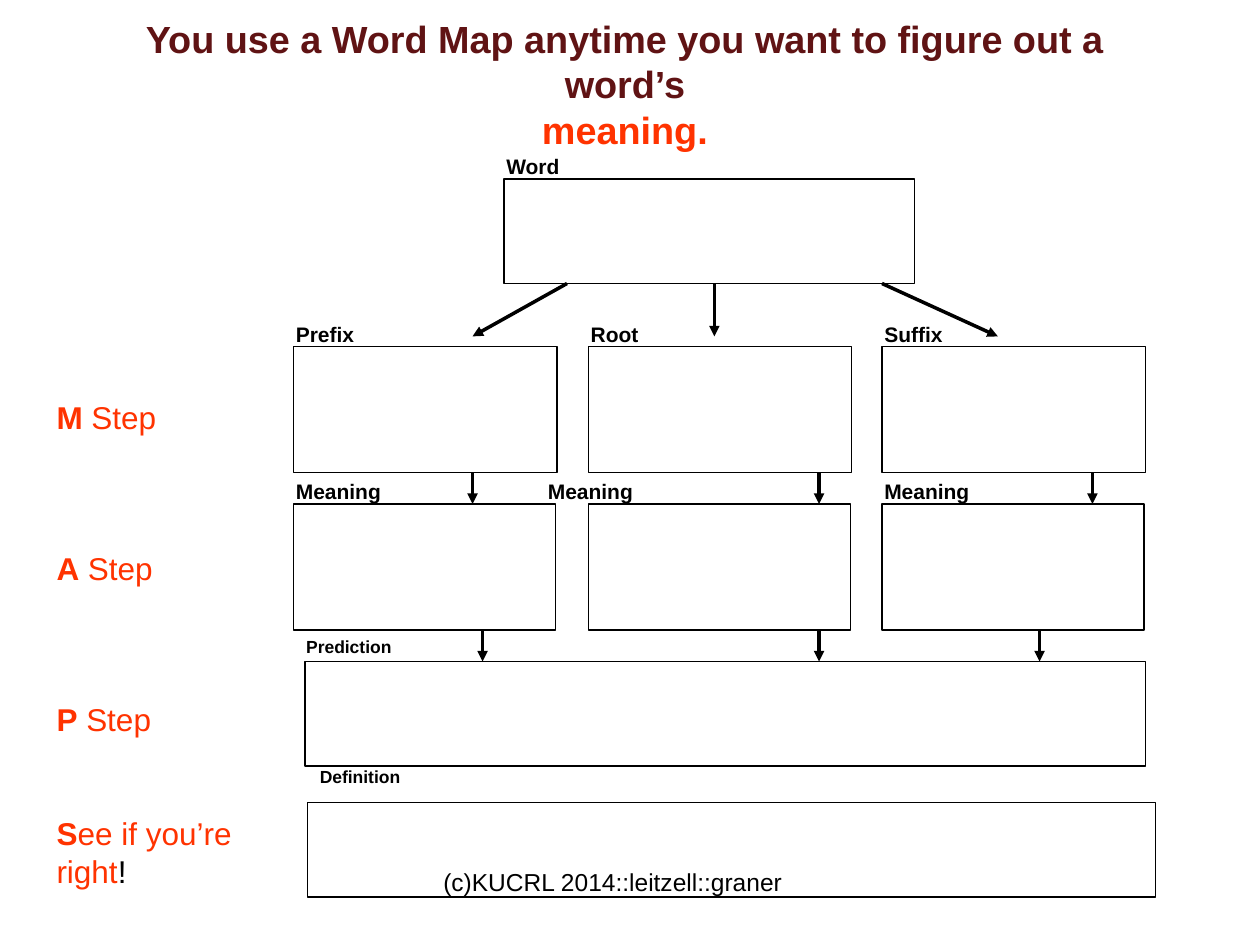
from lxml import etree
from pptx import Presentation
from pptx import util as u
from pptx.dml.color import RGBColor
from pptx.enum import shapes, text
from pptx.oxml.ns import qn

BLACK = RGBColor(0x00, 0x00, 0x00)
MAROON = RGBColor(0x60, 0x13, 0x14)
ORANGE = RGBColor(0xFF, 0x33, 0x00)
FONT = "Arial"
COLUMNS = (2.33, 4.67, 7)


def place(shape, left, top, width, height):
    shape.left, shape.top = u.Inches(left), u.Inches(top)
    shape.width, shape.height = u.Inches(width), u.Inches(height)


def add_span(para, words, size=12, color=BLACK, bold=False):
    span = para.add_run()
    span.text = words
    font = span.font
    font.name, font.size, font.bold = FONT, u.Pt(size), bold
    font.color.rgb = color


def add_text_box(page, left, top, width, height):
    box = page.shapes.add_textbox(0, 0, 0, 0)
    place(box, left, top, width, height)
    box.text_frame.word_wrap = True
    return box


def write_label(box, words, size=12):
    """Bold caption with a hanging indent and no bullet."""
    para = box.text_frame.paragraphs[0]
    properties = para._p.get_or_add_pPr()
    properties.set("marL", str(u.Inches(0.38)))
    properties.set("indent", str(u.Inches(-0.38)))
    etree.SubElement(properties, qn("a:buNone"))
    para.space_before = u.Pt(0)
    add_span(para, words, size=size, bold=True)


def add_label(page, words, left, top, size=12):
    write_label(add_text_box(page, left, top, 1, 0.33), words, size)


def add_frame(page, left, top, width, height):
    frame = page.shapes.add_shape(shapes.MSO_SHAPE.RECTANGLE, 0, 0, 0, 0)
    place(frame, left, top, width, height)
    frame.shadow.inherit = False
    frame.fill.background()
    frame.line.color.rgb = BLACK
    frame.line.width = u.Pt(0.75)


def add_arrow(page, x1, y1, x2, y2):
    arrow = page.shapes.add_connector(
        shapes.MSO_CONNECTOR.STRAIGHT,
        u.Inches(x1), u.Inches(y1), u.Inches(x2), u.Inches(y2))
    arrow.line.color.rgb = BLACK
    arrow.line.width = u.Pt(2)
    etree.SubElement(arrow.line._get_or_add_ln(), qn("a:tailEnd"), type="triangle")
    etree.SubElement(arrow._element.spPr, qn("a:effectLst"))


def fill_title(title):
    place(title, 0.75, 0.25, 8.42, 0.83)
    frame = title.text_frame
    frame.auto_size = text.MSO_AUTO_SIZE.NONE
    frame.vertical_anchor = text.MSO_ANCHOR.MIDDLE
    para = frame.paragraphs[0]
    para.alignment = text.PP_ALIGN.CENTER
    para.line_spacing = u.Pt(26)
    add_span(para, "You use a Word Map anytime you want to figure out a word’s",
             size=21.6, color=MAROON, bold=True)
    para.add_line_break()
    add_span(para, "meaning.", size=21.6, color=ORANGE, bold=True)


def add_steps(page):
    frame = add_text_box(page, 0.35, 3.11, 2.09, 3.74).text_frame
    line = 21.6
    steps = (("M", " Step", 0), ("A", " Step", 3), ("P", " Step", 3),
             ("S", "ee if you’re right", 2))
    for index, (letter, rest, gap_lines) in enumerate(steps):
        para = frame.add_paragraph() if index else frame.paragraphs[0]
        para.line_spacing = u.Pt(line)
        para.space_before = u.Pt(gap_lines * line)
        add_span(para, letter, size=18, color=ORANGE, bold=True)
        add_span(para, rest, size=18, color=ORANGE)
    add_span(para, "!", size=18)


def main():
    deck = Presentation()
    deck.slide_width, deck.slide_height = u.Inches(10), u.Inches(7.5)
    page = deck.slides.add_slide(deck.slide_layouts[1])
    fill_title(page.shapes.title)

    # Prediction caption
    body = page.placeholders[1]
    place(body, 2.33, 5, 1, 0.33)
    body.text_frame.auto_size = text.MSO_AUTO_SIZE.NONE
    write_label(body, "Prediction", size=10)

    # Word, prediction and definition frames
    add_frame(page, 4, 1.42, 3.26, 0.83)
    add_frame(page, 2.42, 5.25, 6.67, 0.83)
    add_frame(page, 2.44, 6.37, 6.73, 0.75)
    add_label(page, "Word", 3.92, 1.17)
    add_label(page, "Definition", 2.44, 6.03, size=10)

    # Word parts and their meanings
    meaning_lefts = (2.25, 4.25, 6.92)
    for part, left, meaning_left in zip(("Prefix", "Root", "Suffix"),
                                        COLUMNS, meaning_lefts):
        add_frame(page, left, 2.75, 2.09, 1)
        add_frame(page, left, 4, 2.08, 1)
        add_label(page, part, left - 0.08, 2.5)
        add_label(page, "Meaning", meaning_left, 3.75)

    # Arrows from the word, then down each column
    for start, end in ((4.5, 3.75), (5.67, 5.67), (7, 7.92)):
        add_arrow(page, start, 2.25, end, 2.67)
    for top, centers in ((3.75, (3.75, 6.5, 8.67)), (5, (3.83, 6.5, 8.25))):
        for x in centers:
            add_arrow(page, x, top, x, top + 0.25)

    # Step names and copyright line
    add_steps(page)
    notice = add_text_box(page, 3.42, 6.83, 3.17, 0.5)
    add_span(notice.text_frame.paragraphs[0],
             "(c)KUCRL 2014::leitzell::graner", size=14)

    deck.save("out.pptx")


if __name__ == "__main__":
    main()
